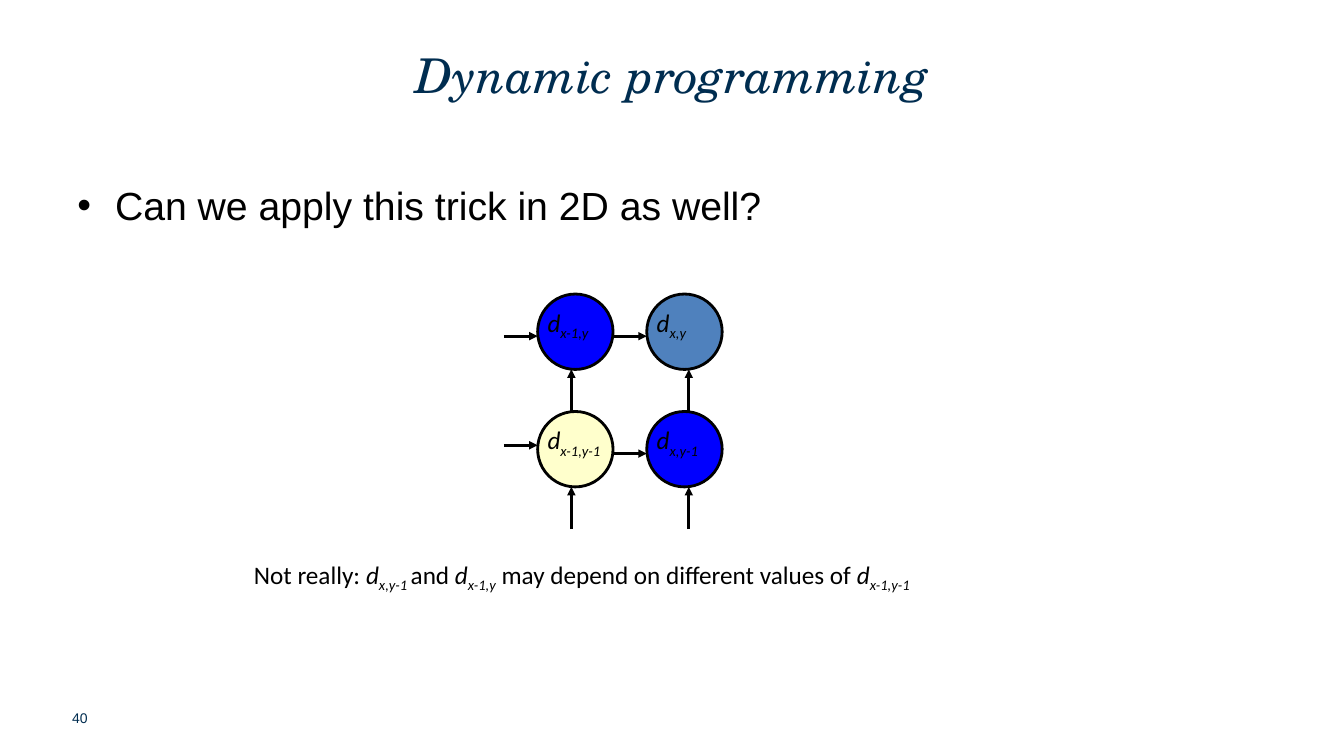
from lxml.etree import SubElement
from pptx import Presentation
from pptx.dml.color import RGBColor
from pptx.enum.shapes import MSO_CONNECTOR, MSO_SHAPE
from pptx.enum.text import MSO_ANCHOR, PP_ALIGN
from pptx.oxml.ns import qn
from pptx.util import Cm, Pt

NAVY, BLACK = "002D50", "000000"


def color(hex_string):
    """Turn a hex string into a colour."""
    return RGBColor.from_string(hex_string)


def add_text(slide, box, pieces, size, face, ink, anchor=MSO_ANCHOR.TOP):
    """Place one paragraph made of (text, style) pieces; styles are plain, italic and sub."""
    frame = slide.shapes.add_textbox(*(Cm(length) for length in box)).text_frame
    frame.word_wrap = True
    frame.vertical_anchor = anchor
    paragraph = frame.paragraphs[0]
    for text, style in pieces:
        run = paragraph.add_run()
        run.text = text
        run.font.size = Pt(size)
        run.font.name = face
        run.font.color.rgb = color(ink)
        run.font.italic = style != "plain"
        if style == "sub":
            run.font._element.set("baseline", "-25000")
    return paragraph


def add_title(slide, box):
    """Write the centred heading."""
    heading = add_text(slide, box, [("Dynamic programming", "italic")],
                       34.2, "TeX Gyre Schola", NAVY, MSO_ANCHOR.MIDDLE)
    heading.alignment = PP_ALIGN.CENTER


def add_question(slide, box):
    """Write the bulleted question."""
    question = add_text(slide, box, [("Can we apply this trick in 2D as well?", "plain")],
                        28, "Arial", BLACK)
    properties = question._p.get_or_add_pPr()
    properties.set("marL", str(Cm(0.95)))
    properties.set("indent", str(Cm(-0.95)))
    SubElement(properties, qn("a:buFont"), typeface="Arial")
    SubElement(properties, qn("a:buChar"), char="•")


def add_arrow(slide, start, end):
    """Draw a black arrow between two points."""
    arrow = slide.shapes.add_connector(
        MSO_CONNECTOR.STRAIGHT, *(Cm(length) for length in (*start, *end)))
    arrow.line.color.rgb = color(BLACK)
    arrow.line.width = Pt(2)
    SubElement(arrow.line._get_or_add_ln(), qn("a:tailEnd"), type="triangle")
    SubElement(arrow._element.spPr, qn("a:effectLst"))


def add_node(slide, left, top, diameter, fill, subscript, label_width):
    """Draw one circle with its subscripted distance."""
    circle = slide.shapes.add_shape(
        MSO_SHAPE.OVAL, Cm(left), Cm(top), Cm(diameter), Cm(diameter))
    circle.shadow.inherit = False
    circle.fill.solid()
    circle.fill.fore_color.rgb = color(fill)
    circle.line.color.rgb = color(BLACK)
    circle.line.width = Pt(2)
    add_text(slide, (left, top + 0.21, label_width, 1.02),
             [("d", "italic"), (subscript, "sub")], 18, "Calibri", BLACK)


def add_grid(slide, box):
    """Draw the grid of distances, each node fed from its left and from below."""
    left, top, width, height = box
    diameter, across, up = 1.9, 0.85, 1.06
    column_step, row_step = width / 2, height / 2
    nodes = [
        (1, 0, "4F81BD", "x,y", 1.9, 1.06, 1.06),
        (0, 0, "0000FF", "x-1,y", 2.33, 1.06, 0.85),
        (1, 1, "0000FF", "x,y-1", 2.33, 1.06, 1.06),
        (0, 1, "FFFFCC", "x-1,y-1", 2.75, 0.85, 0.85),
    ]
    for column, row, fill, subscript, label_width, entry_y, entry_x in nodes:
        node_left = left + across + column * column_step
        node_top = top + row * row_step
        node_bottom = node_top + diameter
        add_node(slide, node_left, node_top, diameter, fill, subscript, label_width)
        add_arrow(slide, (node_left - across, node_top + entry_y),
                  (node_left, node_top + entry_y))
        add_arrow(slide, (node_left + entry_x, node_bottom + up),
                  (node_left + entry_x, node_bottom))


def add_answer(slide, box):
    """Write the answer below the grid."""
    add_text(slide, box, [
        ("Not really: ", "plain"), ("d", "italic"), ("x,y-1 ", "sub"),
        ("and ", "plain"), ("d", "italic"), ("x-1,y", "sub"),
        (" may depend on different values of ", "plain"),
        ("d", "italic"), ("x-1,y-1", "sub"),
    ], 18, "Calibri", BLACK)


def add_page_number(slide, box):
    """Write the page number."""
    add_text(slide, box, [("40", "plain")], 10, "Arial", NAVY, MSO_ANCHOR.MIDDLE)


def main():
    """Build and save the slide."""
    deck = Presentation()
    deck.slide_width, deck.slide_height = Cm(33.87), Cm(19.05)
    slide = deck.slides.add_slide(deck.slide_layouts[6])
    add_page_number(slide, (1.57, 17.58, 1.45, 1.02))
    add_title(slide, (1.7, 0.97, 30.48, 1.83))
    add_question(slide, (1.7, 4.45, 30.48, 11.38))
    add_grid(slide, (12.7, 7.41, 5.5, 5.92))
    add_answer(slide, (6.15, 13.97, 21.39, 1.02))
    deck.save("out.pptx")


if __name__ == "__main__":
    main()
